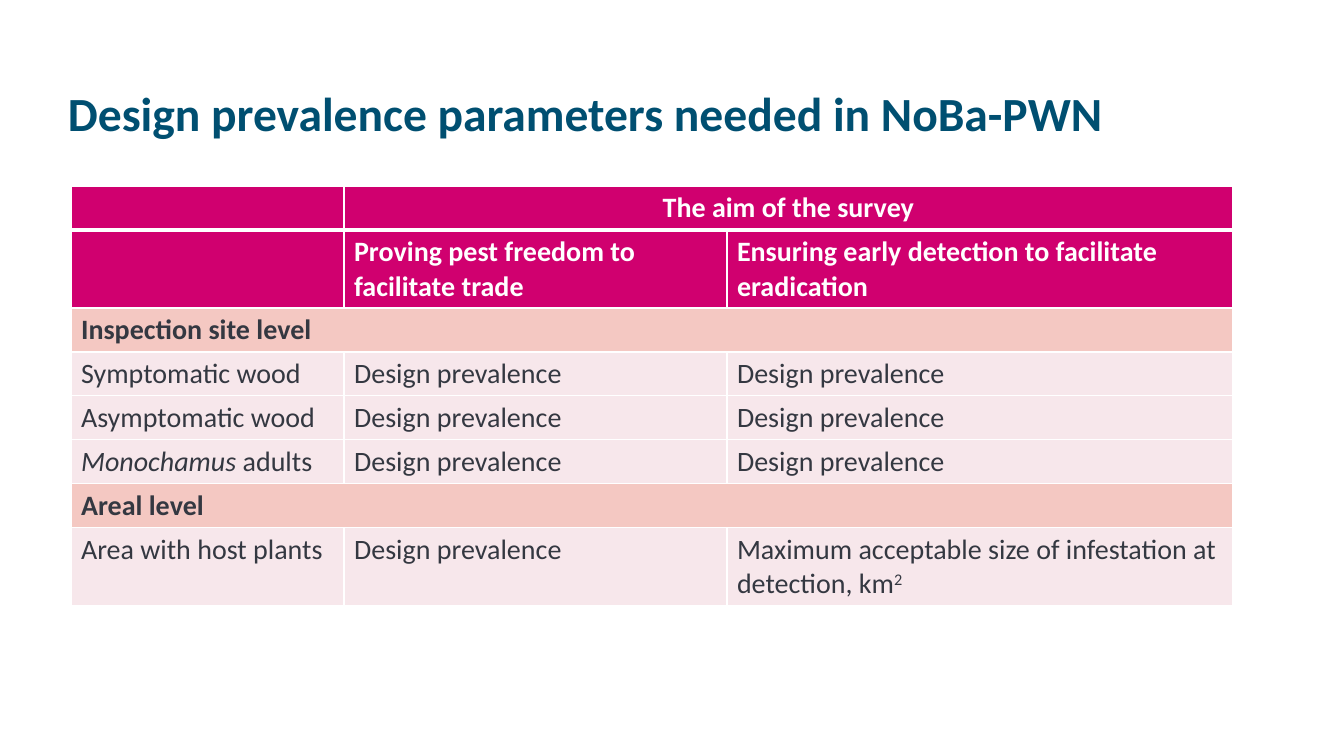
from lxml import etree
from pptx import Presentation
from pptx import util as u
from pptx.dml.color import RGBColor
from pptx.enum import text
from pptx.oxml import ns

SCALE = 914400 / 100.8  # EMU per px
MAGENTA, SALMON, PINK = "D0006F", "F4C8C2", "F7E7EB"
WHITE, DARK, TEAL = "FFFFFF", "343841", "004F71"


def px(length):
    return u.Emu(round(length * SCALE))


def style(span, size, color, bold):
    span.font.name = "Calibri"
    span.font.size = u.Pt(size)
    span.font.bold = bold
    span.font.color.rgb = RGBColor.from_string(color)


deck = Presentation()
deck.slide_width, deck.slide_height = px(1344), px(756)
page = deck.slides.add_slide(deck.slide_layouts[6])

# Title
box = page.shapes.add_textbox(px(58), px(40), px(1159), px(146))
frame = box.text_frame
frame.word_wrap = True
frame.vertical_anchor = text.MSO_ANCHOR.MIDDLE
para = frame.paragraphs[0]
para.text = "Design prevalence parameters needed in NoBa-PWN"
para.line_spacing = u.Pt(40)
style(para.runs[0], 34, TEAL, True)

# Table content: fill, text colour, bold, cells as lists of runs
PREVALENCE = ["Design prevalence"]
header = (MAGENTA, WHITE, True)
section = (SALMON, DARK, True)
body = (PINK, DARK, False)
rows = [
    (header, [[], ["The aim of the survey"], []]),
    (header, [[], ["Proving pest freedom to facilitate trade"],
              ["Ensuring early detection to facilitate eradication"]]),
    (section, [["Inspection site level"], [], []]),
    (body, [["Symptomatic wood"], PREVALENCE, PREVALENCE]),
    (body, [["Asymptomatic wood"], PREVALENCE, PREVALENCE]),
    (body, [["Monochamus", " adults"], PREVALENCE, PREVALENCE]),
    (section, [["Areal level"], [], []]),
    (body, [["Area with host plants"], PREVALENCE,
            ["Maximum acceptable size of infestation at detection, km", "2"]]),
]
widths = [273, 383, 506]
heights = [44, 78, 44, 44, 44, 44, 44, 78]

# Table grid
table = page.shapes.add_table(len(rows), len(widths), px(71), px(186),
                              px(sum(widths)), px(sum(heights))).table
table.first_row = table.horz_banding = False
for column, width in zip(table.columns, widths):
    column.width = px(width)
for row, height in zip(table.rows, heights):
    row.height = px(height)

# Cells: fill, runs and white borders, thicker below the first row
for r, ((fill, color, bold), cells) in enumerate(rows):
    for c, runs in enumerate(cells):
        cell = table.cell(r, c)
        cell.fill.solid()
        cell.fill.fore_color.rgb = RGBColor.from_string(fill)
        para = cell.text_frame.paragraphs[0]
        for words in runs:
            span = para.add_run()
            span.text = words
            style(span, 20, color, bold)
        points = {"lnL": 1, "lnR": 1, "lnT": 3 if r == 1 else 1, "lnB": 3 if r == 0 else 1}
        for i, (side, width) in enumerate(points.items()):
            line = etree.Element(ns.qn("a:" + side), w=str(u.Pt(width)))
            paint = etree.SubElement(line, ns.qn("a:solidFill"))
            etree.SubElement(paint, ns.qn("a:srgbClr"), val=WHITE)
            cell._tc.get_or_add_tcPr().insert(i, line)

# Spanning cells
table.cell(0, 1).merge(table.cell(0, 2))
table.cell(0, 1).text_frame.paragraphs[0].alignment = text.PP_ALIGN.CENTER
for r in (2, 6):
    table.cell(r, 0).merge(table.cell(r, 2))

# Italic genus name and superscript unit
table.cell(5, 0).text_frame.paragraphs[0].runs[0].font.italic = True
square = table.cell(7, 2).text_frame.paragraphs[0].runs[1]
square._r.get_or_add_rPr().set("baseline", "30000")

deck.save("out.pptx")
